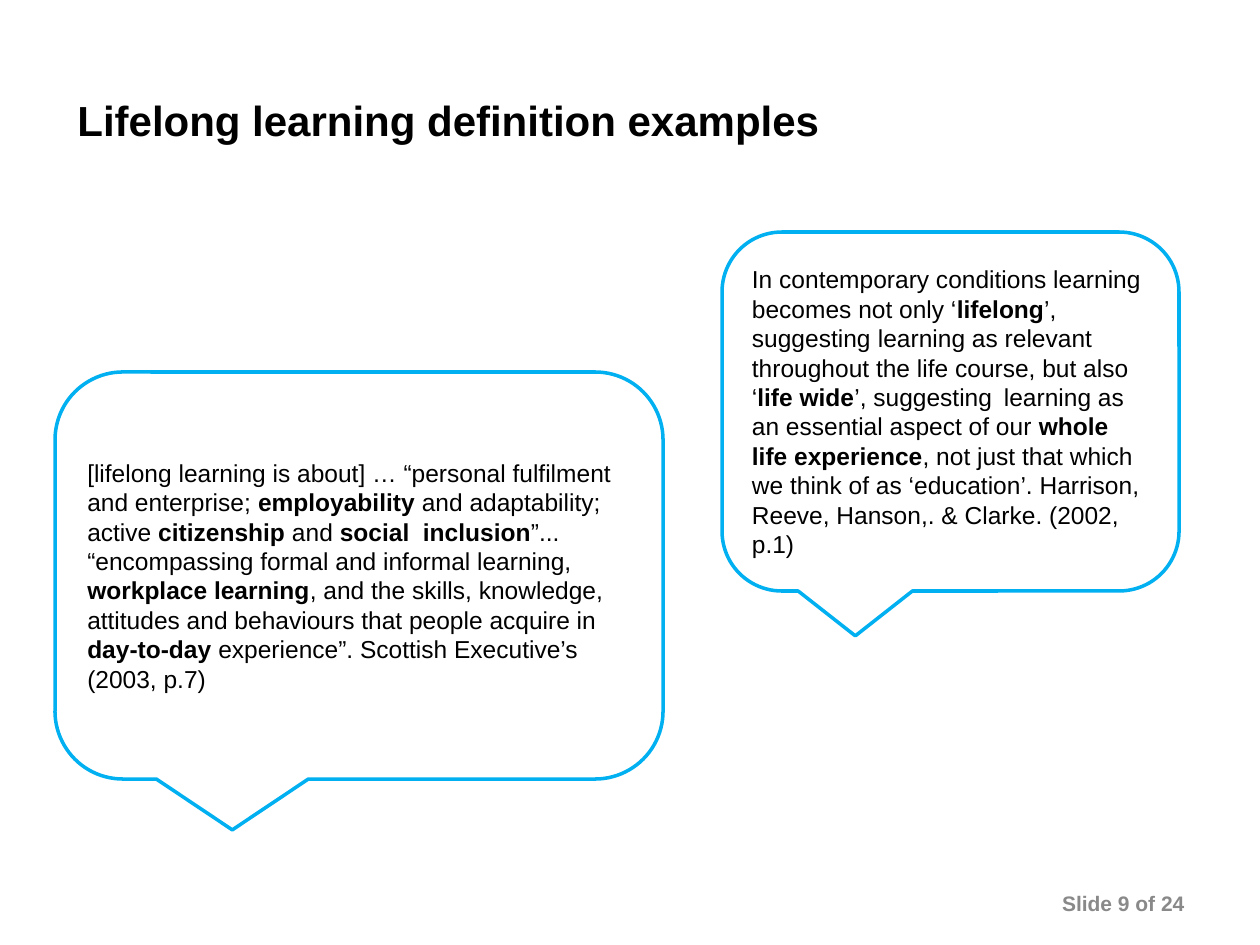
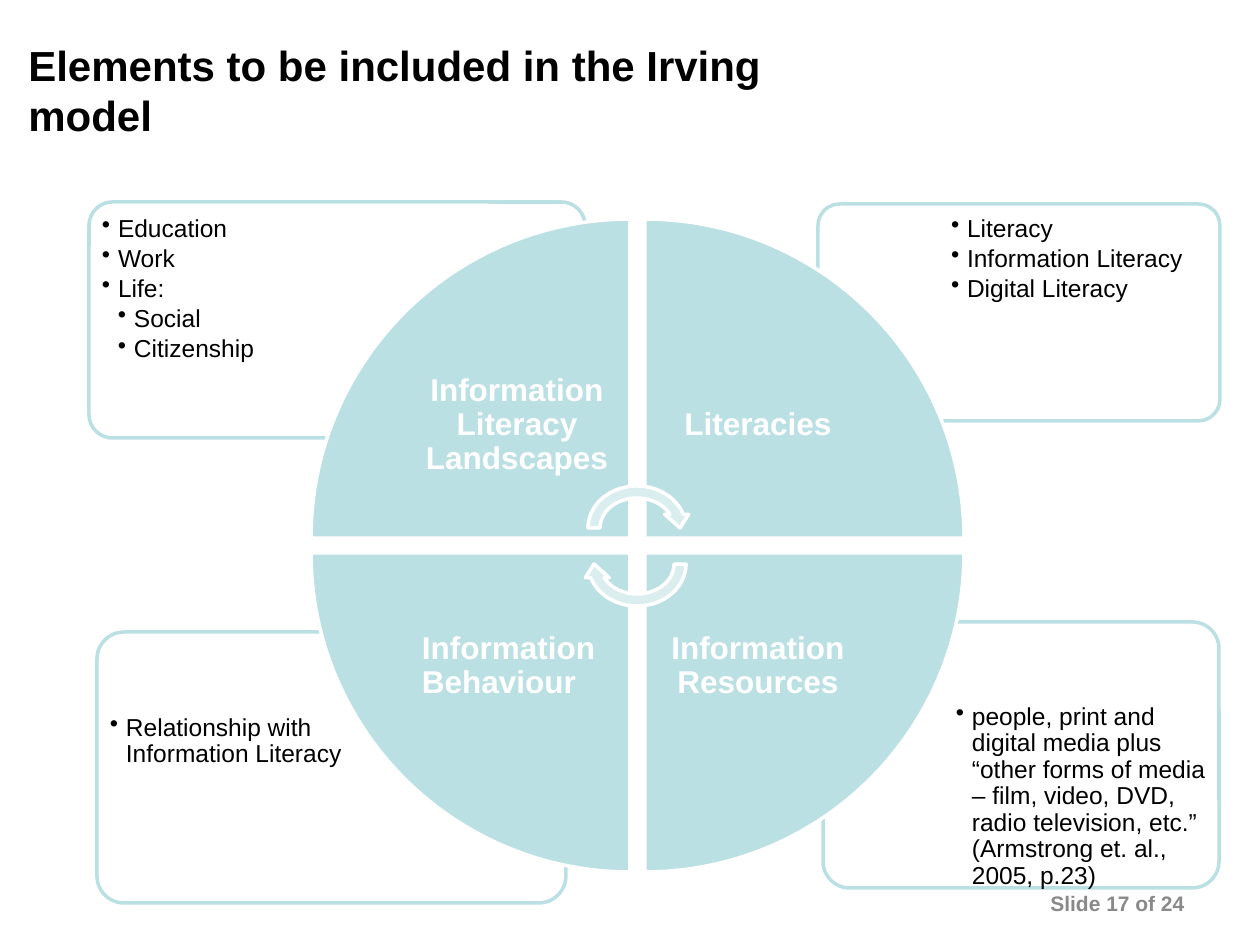
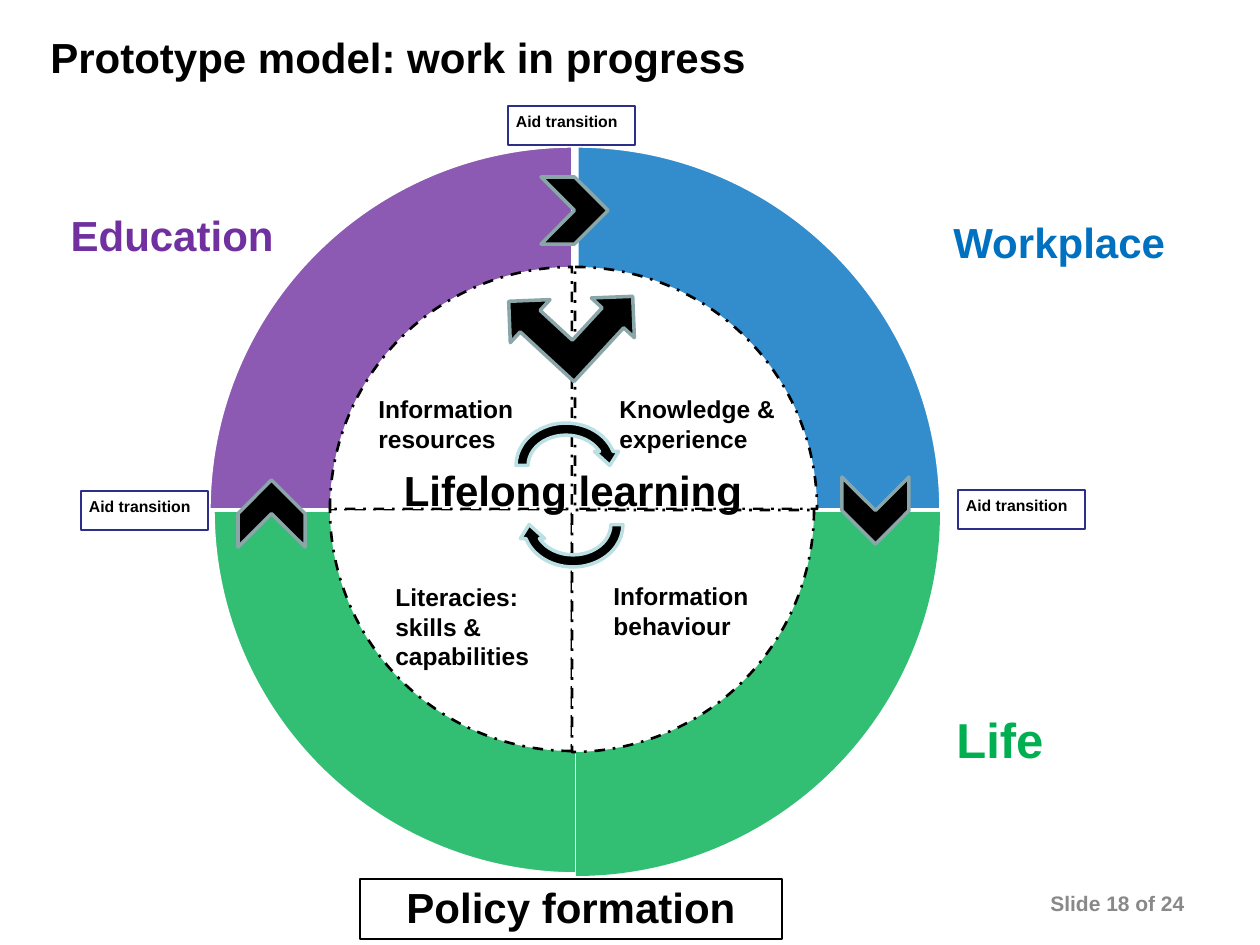
from lxml.etree import SubElement
from pptx import Presentation
from pptx.dml.color import RGBColor
from pptx.enum.dml import MSO_LINE
from pptx.enum.shapes import MSO_SHAPE as Shape
from pptx.enum.text import MSO_ANCHOR as Anchor, PP_ALIGN as Align
from pptx.oxml.ns import qn
from pptx.util import Emu, Pt

PX_PER_INCH = 126
SLIDE_COUNT = 24
FONT = "Arial"

BLACK = RGBColor(0x00, 0x00, 0x00)
WHITE = RGBColor(0xFF, 0xFF, 0xFF)
GREY = RGBColor(0x89, 0x89, 0x89)
CYAN = RGBColor(0x00, 0xB0, 0xF0)
AQUA = RGBColor(0xBB, 0xE0, 0xE3)
PALE_AQUA = RGBColor(0xDA, 0xED, 0xEF)
SLATE = RGBColor(0x8A, 0xA6, 0xA8)
NAVY = RGBColor(0x2D, 0x2D, 0x8A)
PURPLE = RGBColor(0x70, 0x30, 0xA0)
BLUE = RGBColor(0x00, 0x70, 0xC0)
GREEN = RGBColor(0x00, 0xB0, 0x50)

# Quarters of a circle, numbered clockwise by quarter turns
TOP_LEFT, TOP_RIGHT, BOTTOM_RIGHT, BOTTOM_LEFT = range(4)


def px(length):
    return Emu(round(length * 914400 / PX_PER_INCH))


def write(frame, text, size=14, color=BLACK, bold=False, align=Align.LEFT,
          anchor=Anchor.TOP, inset=None, spacing=None, after=0, levels=None):
    """Fill a frame, one paragraph per line; *stars* switch bold, levels add bullets."""
    frame.word_wrap = True
    frame.vertical_anchor = anchor
    if inset is not None:
        frame.margin_left = frame.margin_right = px(inset)
        frame.margin_top = frame.margin_bottom = px(inset)
    for i, line in enumerate(text.split("\n")):
        paragraph = frame.add_paragraph() if i else frame.paragraphs[0]
        paragraph.alignment = align
        paragraph.space_after = Pt(after)
        if spacing:
            paragraph.line_spacing = spacing
        if levels:
            add_bullet(paragraph, levels[i])
        for j, part in enumerate(line.split("*")):
            if part:
                run = paragraph.add_run()
                run.text = part
                run.font.name = FONT
                run.font.size = Pt(size)
                run.font.bold = bold or j % 2 == 1
                run.font.color.rgb = color


def add_bullet(paragraph, level):
    properties = paragraph._p.get_or_add_pPr()
    properties.set("marL", str(px(16 * level)))
    properties.set("indent", str(-px(16)))
    SubElement(properties, qn("a:buChar")).set("char", "•")


class Deck:
    def __init__(self):
        self.presentation = Presentation()
        self.presentation.slide_width = px(1260)
        self.presentation.slide_height = px(945)
        self.slide = None

    def new_slide(self, number):
        self.slide = self.presentation.slides.add_slide(
            self.presentation.slide_layouts[6])
        self.text(906, 881, 291, 45, f"Slide {number} of {SLIDE_COUNT}", size=12,
                  color=GREY, bold=True, align=Align.RIGHT, anchor=Anchor.MIDDLE)

    def text(self, x, y, w, h, text, **style):
        box = self.slide.shapes.add_textbox(px(x), px(y), px(w), px(h))
        write(box.text_frame, text, **style)

    def title(self, x, y, w, h, text, **style):
        self.text(x, y, w, h, text, size=24, bold=True, anchor=Anchor.MIDDLE, **style)

    def shape(self, kind, x, y, w, h, fill=None, line=None, width=2,
              rotation=0, opacity=None, dash=None):
        shape = self.slide.shapes.add_shape(kind, px(x), px(y), px(w), px(h))
        shape.shadow.inherit = False
        shape.rotation = rotation
        if fill is None:
            shape.fill.background()
        else:
            shape.fill.solid()
            shape.fill.fore_color.rgb = fill
        if opacity:
            color = shape.element.spPr.find(qn("a:solidFill"))[0]
            SubElement(color, qn("a:alpha")).set("val", str(opacity * 1000))
        if line is None:
            shape.line.fill.background()
        else:
            shape.line.color.rgb = line
            shape.line.width = Pt(width)
            if dash:
                shape.line.dash_style = dash
        return shape

    def callout(self, x, y, w, h, quote):
        bubble = self.shape(Shape.ROUNDED_RECTANGULAR_CALLOUT, x, y, w, h, WHITE, CYAN)
        write(bubble.text_frame, quote, anchor=Anchor.MIDDLE)

    def panel(self, x, y, w, h):
        frame = self.shape(Shape.ROUNDED_RECTANGLE, x, y, w, h, WHITE, AQUA, opacity=90)
        frame.adjustments[0] = 0.1

    def bullets(self, x, y, w, h, text, levels):
        self.text(x, y, w, h, text, inset=8, spacing=0.9, after=2.1, levels=levels)

    def quarter(self, corner, x, y, size, fill, line=None, **style):
        self.shape(Shape.PIE_WEDGE, x, y, size, size, fill, line,
                   rotation=90 * corner, **style)

    def cycle_arrows(self, upper, lower, w, h, fill, line):
        for (x, y), rotation in ((upper, 0), (lower, 180)):
            self.shape(Shape.CIRCULAR_ARROW, x, y, w, h, fill, line, rotation=rotation)

    def label_box(self, x, y, w, h, text, line, **style):
        box = self.shape(Shape.RECTANGLE, x, y, w, h, line=line, width=0.75)
        write(box.text_frame, text, bold=True, inset=8, spacing=0.9, **style)


def definitions(deck):
    deck.new_slide(9)
    deck.title(53, 54, 791, 132, "Lifelong learning definition examples",
               align=Align.CENTER)
    deck.callout(722, 232, 457, 359,
                 "In contemporary conditions learning becomes not only ‘*lifelong*’, "
                 "suggesting \tlearning as relevant throughout the life course, but also "
                 "‘*life wide*’, suggesting \tlearning as an essential aspect of our "
                 "*whole life experience*, not just that which we think of as "
                 "‘education’. Harrison, Reeve, Hanson,. & Clarke. (2002, p.1)")
    deck.callout(55, 372, 608, 407,
                 "[lifelong learning is about] … “personal fulfilment and enterprise; "
                 "*employability* and adaptability; active *citizenship* and "
                 "*social  inclusion*”...\n"
                 "“encompassing formal and informal learning, *workplace learning*, "
                 "and the skills, knowledge, attitudes and behaviours that people "
                 "acquire in *day-to-day* experience”. Scottish Executive’s (2003, p.7)")


def elements(deck):
    deck.new_slide(17)
    deck.title(16, 42, 806, 95, "Elements to be included in the Irving model")

    deck.panel(823, 622, 396, 266)
    deck.bullets(948, 696, 266, 188,
                 "people, print and digital media plus “other forms of media – film, "
                 "video, DVD, radio television, etc.” (Armstrong et. al., 2005, p.23)", [1])
    deck.panel(97, 632, 469, 271)
    deck.bullets(102, 707, 316, 192, "Relationship with Information Literacy", [1])
    deck.panel(818, 204, 402, 217)
    deck.bullets(943, 208, 271, 154,
                 "Literacy\nInformation Literacy\nDigital Literacy", [1, 1, 1])
    deck.panel(89, 202, 496, 236)
    deck.bullets(94, 208, 336, 166,
                 "Education\nWork\nLife:\nSocial\nCitizenship", [1, 1, 1, 2, 2])

    left, right, top, bottom = 311, 645, 219, 553
    wedge, label = 319, 226
    inner = wedge - label
    for corner, x, y, name, align in (
            (TOP_LEFT, left, top, "Information Literacy Landscapes", Align.CENTER),
            (TOP_RIGHT, right, top, "Literacies", Align.CENTER),
            (BOTTOM_RIGHT, right, bottom, "Information Resources", Align.CENTER),
            (BOTTOM_LEFT, left, bottom, "Information Behaviour", Align.LEFT)):
        deck.quarter(corner, x, y, wedge, AQUA, WHITE)
        deck.text(x + inner if x == left else x, y + inner if y == top else y,
                  label, label, name, size=18, color=WHITE, bold=True, align=align,
                  anchor=Anchor.MIDDLE, inset=18, spacing=0.9)
    deck.cycle_arrows((582, 480), (582, 516), 110, 96, PALE_AQUA, WHITE)


def prototype(deck):
    deck.new_slide(18)
    deck.text(38, 25, 852, 63, "Prototype model: work in progress", size=24, bold=True)

    for corner, x, y, color, edge in ((BOTTOM_LEFT, 213, 510, GREEN, WHITE),
                                      (TOP_LEFT, 209, 146, PURPLE, WHITE),
                                      (BOTTOM_RIGHT, 576, 512, GREEN, None),
                                      (TOP_RIGHT, 577, 146, BLUE, WHITE)):
        deck.quarter(corner, x, y, 364, color, edge, opacity=80)
    for corner, x, y in ((BOTTOM_LEFT, 330, 509), (TOP_LEFT, 330, 267),
                         (TOP_RIGHT, 575, 267), (BOTTOM_RIGHT, 572, 510)):
        deck.quarter(corner, x, y, 242, WHITE, BLACK, width=1.5, dash=MSO_LINE.DASH_DOT)

    for x, y, w, h, sector, size, color, align in (
            (941, 210, 243, 63, "Workplace", 24, BLUE, Align.LEFT),
            (944, 703, 156, 72, "Life", 28, GREEN, Align.LEFT),
            (37, 203, 249, 63, "Education", 24, PURPLE, Align.RIGHT)):
        deck.text(x, y, w, h, sector, size=size, color=color, bold=True, align=align)
    for x, y, w, h, topic in ((607, 388, 210, 72, "Knowledge & experience"),
                              (383, 576, 200, 102, "Literacies: skills & capabilities"),
                              (366, 388, 190, 72, "Information resources"),
                              (601, 575, 210, 72, "Information behaviour")):
        deck.text(x, y, w, h, topic, bold=True)

    for x, y in ((958, 490), (508, 106), (81, 491)):
        deck.label_box(x, y, 127, 39, "Aid transition", NAVY, size=9)
    for x, y, rotation in ((842, 477, 90), (541, 177, 0), (238, 480, 270)):
        deck.shape(Shape.CHEVRON, x, y, 67, 67, BLACK, SLATE, rotation=rotation)

    deck.text(386, 462, 374, 60, "Lifelong learning", size=24, bold=True,
              align=Align.CENTER, inset=8, spacing=0.9)
    deck.cycle_arrows((510, 417), (517, 476), 112, 97, BLACK, AQUA)
    deck.label_box(360, 879, 422, 60, "Policy formation", BLACK, size=24,
                   align=Align.CENTER)
    deck.shape(Shape.LEFT_UP_ARROW, 513, 261, 117, 117, BLACK, SLATE, rotation=42.7)


def main():
    deck = Deck()
    definitions(deck)
    elements(deck)
    prototype(deck)
    deck.presentation.save("out.pptx")


if __name__ == "__main__":
    main()
